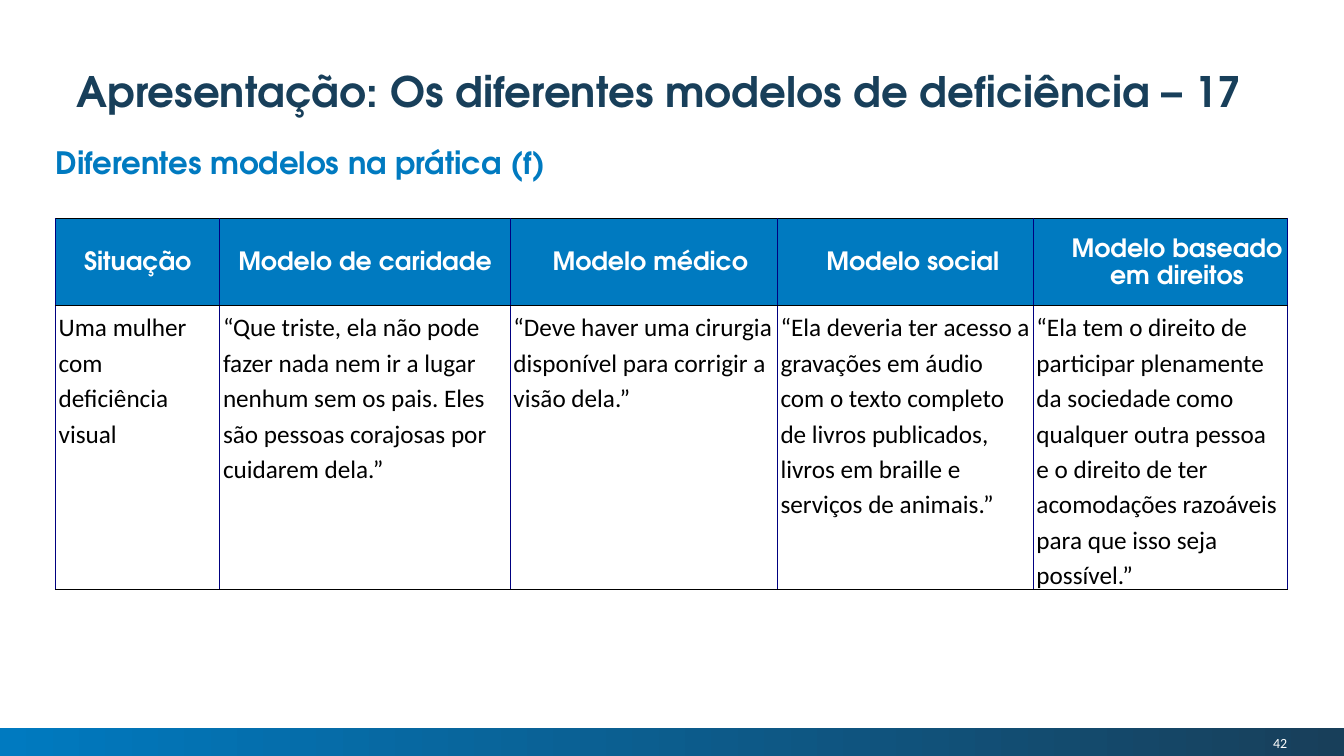
from lxml.etree import SubElement
from pptx import Presentation
from pptx.dml.color import RGBColor
from pptx.enum.shapes import MSO_SHAPE
from pptx.enum.text import MSO_ANCHOR, PP_ALIGN
from pptx.oxml.ns import qn
from pptx.util import Cm, Pt

BLUE = RGBColor(0x00, 0x7A, 0xC0)
DARK_BLUE = RGBColor(0x18, 0x3F, 0x5A)
NAVY = RGBColor(0x00, 0x00, 0x80)
BLACK = RGBColor(0x00, 0x00, 0x00)
WHITE = RGBColor(0xFF, 0xFF, 0xFF)

HEADING_FONT = "TeX Gyre Adventor"
BODY_FONT = "Calibri"

SLIDE_WIDTH, SLIDE_HEIGHT = 33.87, 19.05
MARGIN, CONTENT_WIDTH = 1.4, 31.04

MODELS = [
    ("Situação", 4.14, 0, "Uma mulher com deficiência visual"),
    ("Modelo de caridade", 7.32, 0,
     "“Que triste, ela não pode fazer nada nem ir a lugar nenhum sem os pais. "
     "Eles são pessoas corajosas por cuidarem dela.”"),
    ("Modelo médico", 6.73, 0.33,
     "“Deve haver uma cirurgia disponível para corrigir a visão dela.”"),
    ("Modelo social", 6.45, 0.38,
     "“Ela deveria ter acesso a gravações em áudio com o texto completo de "
     "livros publicados, livros em braille e serviços de animais.”"),
    ("Modelo baseado em direitos", 6.4, 0.84,
     "“Ela tem o direito de participar plenamente da sociedade como qualquer "
     "outra pessoa e o direito de ter acomodações razoáveis para que isso seja "
     "possível.”"),
]
ROW_HEIGHTS = (2.18, 6.86)


def write_text(frame, text, size=18, font=BODY_FONT, color=BLACK, bold=False,
               align=PP_ALIGN.LEFT, spacing=1.0, indent=0, hanging=0):
    frame.word_wrap = True
    paragraph = frame.paragraphs[0]
    paragraph.alignment = align
    paragraph.line_spacing = spacing
    properties = paragraph._p.get_or_add_pPr()
    properties.set("marL", str(int(Cm(indent))))
    properties.set("indent", str(-int(Cm(hanging))))
    run = paragraph.add_run()
    run.text = text
    run.font.size = Pt(size)
    run.font.name = font
    run.font.bold = bold
    run.font.color.rgb = color


class SlideBuilder:
    def __init__(self, slide):
        self.slide = slide
        self.heading = {"font": HEADING_FONT, "bold": True}

    def gradient_band(self, left, top, width, height, colors):
        band = self.slide.shapes.add_shape(
            MSO_SHAPE.RECTANGLE, Cm(left), Cm(top), Cm(width), Cm(height))
        band.shadow.inherit = False
        band.line.fill.background()
        band.fill.gradient()
        band.fill.gradient_angle = 0
        for position, (stop, color) in enumerate(zip(band.fill.gradient_stops, colors)):
            stop.position = position
            stop.color.rgb = color

    def text(self, left, top, width, height, text, anchor=MSO_ANCHOR.TOP,
             inset=(0, 0), **style):
        box = self.slide.shapes.add_textbox(Cm(left), Cm(top), Cm(width), Cm(height))
        frame = box.text_frame
        frame.margin_left = frame.margin_right = Cm(inset[0])
        frame.margin_top = frame.margin_bottom = Cm(inset[1])
        frame.vertical_anchor = anchor
        write_text(frame, text, **style)

    def models_table(self, left, top, models, row_heights):
        widths = [width for _, width, _, _ in models]
        table = self.slide.shapes.add_table(
            len(row_heights), len(models), Cm(left), Cm(top),
            Cm(sum(widths)), Cm(sum(row_heights))).table
        table.first_row = table.horz_banding = False
        for row, height in zip(table.rows, row_heights):
            row.height = Cm(height)
        for index, (header, width, indent, statement) in enumerate(models):
            table.columns[index].width = Cm(width)
            self.cell(table.cell(0, index), header, BLUE, 0, MSO_ANCHOR.MIDDLE,
                      color=WHITE, align=PP_ALIGN.CENTER, indent=indent, **self.heading)
            self.cell(table.cell(1, index), statement, WHITE, 0.08, MSO_ANCHOR.TOP)

    def cell(self, cell, text, fill, inset, anchor, **style):
        cell.margin_left = cell.margin_right = Cm(inset)
        cell.margin_top = cell.margin_bottom = Cm(inset)
        cell.vertical_anchor = anchor
        self.borders(cell)
        cell.fill.solid()
        cell.fill.fore_color.rgb = fill
        write_text(cell.text_frame, text, spacing=1.15, **style)

    def borders(self, cell):
        properties = cell._tc.get_or_add_tcPr()
        for side, color in (("L", NAVY), ("R", NAVY), ("T", BLACK), ("B", BLACK)):
            line = SubElement(properties, qn(f"a:ln{side}"), w=str(int(Pt(1))))
            solid = SubElement(line, qn("a:solidFill"))
            SubElement(solid, qn("a:srgbClr"), val=str(color))


def main():
    presentation = Presentation()
    presentation.slide_width = Cm(SLIDE_WIDTH)
    presentation.slide_height = Cm(SLIDE_HEIGHT)
    builder = SlideBuilder(presentation.slides.add_slide(presentation.slide_layouts[6]))

    builder.gradient_band(0, 18.34, SLIDE_WIDTH, 0.71, (BLUE, DARK_BLUE))
    builder.text(27.86, 18.42, 4.58, 0.61, "42", anchor=MSO_ANCHOR.MIDDLE,
                 size=10, color=WHITE, align=PP_ALIGN.RIGHT)
    builder.text(MARGIN, 3.56, CONTENT_WIDTH, 0.99, "Diferentes modelos na prática (f)",
                 anchor=MSO_ANCHOR.BOTTOM, size=22, color=BLUE, spacing=1.5,
                 indent=0.79, hanging=0.79, **builder.heading)
    builder.models_table(MARGIN, 5.51, MODELS, ROW_HEIGHTS)
    builder.text(1.09, 1.4, CONTENT_WIDTH, 1.19,
                 "Apresentação: Os diferentes modelos de deficiência – 17",
                 inset=(0.25, 0.13), size=30, color=DARK_BLUE, spacing=1.1,
                 align=PP_ALIGN.CENTER, **builder.heading)

    presentation.save("out.pptx")


if __name__ == "__main__":
    main()
